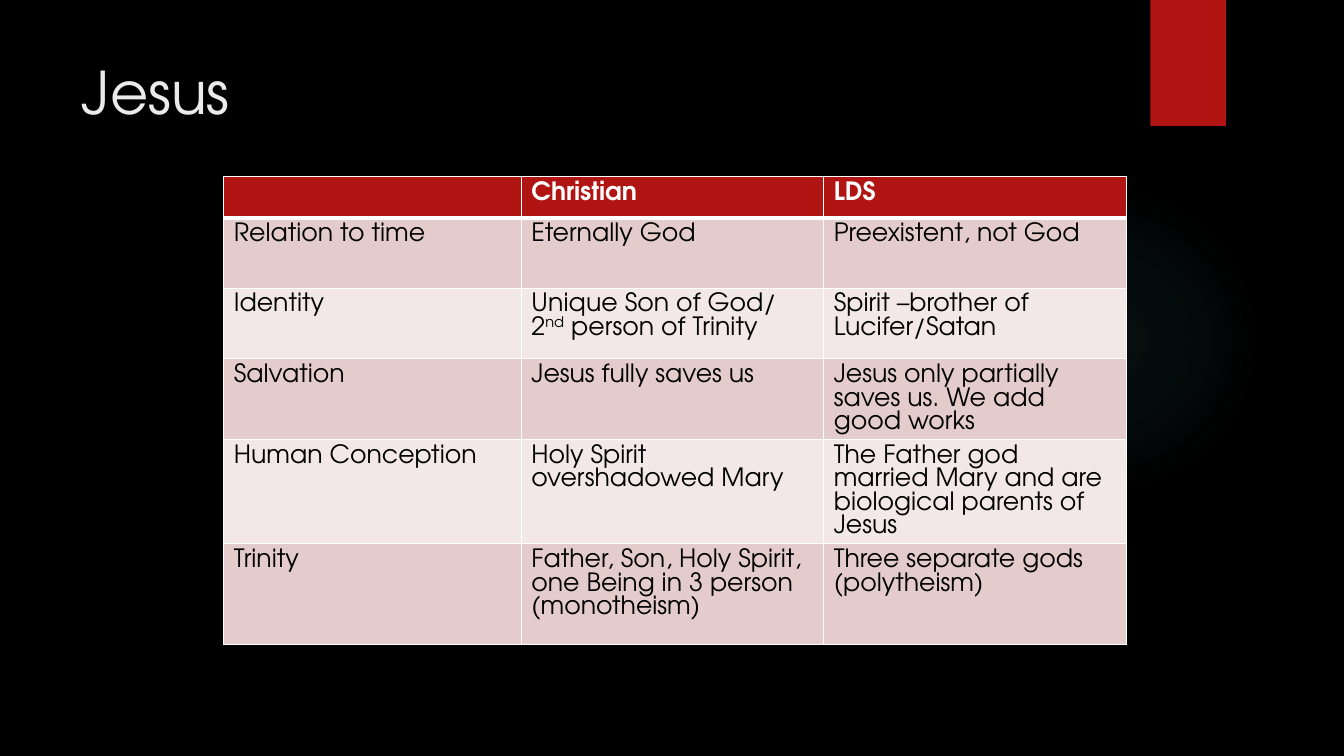
from lxml import etree
from pptx import Presentation
from pptx.dml.color import RGBColor
from pptx.enum.shapes import MSO_SHAPE
from pptx.enum.text import MSO_ANCHOR, PP_ALIGN
from pptx.oxml import parse_xml
from pptx.util import Inches, Pt

RECT, OVAL = MSO_SHAPE.RECTANGLE, MSO_SHAPE.OVAL
TOP, LEFT = MSO_ANCHOR.TOP, PP_ALIGN.LEFT
NS = "http://schemas.openxmlformats.org/drawingml/2006/main"

TITLE = "Jesus"
ROWS = [
    ("", "Christian", "LDS"),
    ("Relation to time", "Eternally God", "Preexistent, not God"),
    ("Identity", "Unique Son of God/ 2^nd^ person of Trinity",
     "Spirit –brother of Lucifer/Satan"),
    ("Salvation", "Jesus fully saves us",
     "Jesus only partially saves us. We add good works"),
    ("Human Conception", "Holy Spirit overshadowed Mary",
     "The Father god married Mary and are biological parents of Jesus"),
    ("Trinity",
     "Father, Son, Holy Spirit, one Being in 3 person\n(monotheism)",
     "Three separate gods (polytheism)"),
]
WIDTHS = (2.95, 3, 3)
HEIGHTS = (0.41, 0.7, 0.7, 0.7, 0.7, 1)
GLOW = ((0, 7), (36, 6), (69, 0))


class Theme:
    font = "TeX Gyre Adventor"
    back, ink, white = "000000", "000000", "FFFFFF"
    title, red, glow = "EBEBEB", "B01513", "50B9C1"
    bands = ("F2E8E7", "E4CCCC")
    big, body = 42, 18
    thin, thick = 1, 3


def paint(fill, color):
    fill.solid()
    fill.fore_color.rgb = RGBColor.from_string(color)


def write(frame, text, size=Theme.body, color=Theme.ink, bold=False):
    for i, line in enumerate(text.split("\n")):
        para = frame.add_paragraph() if i else frame.paragraphs[0]
        para.alignment = LEFT
        para.font.size = Pt(size)
        for j, part in enumerate(line.split("^")):
            if not part:
                continue
            run = para.add_run()
            run.text = part
            font = run.font
            font.name, font.size, font.bold = Theme.font, Pt(size), bold
            font.color.rgb = RGBColor.from_string(color)
            if j % 2:
                font._element.set("baseline", "30000")


def edge(cell, **sides):
    props = cell._tc.get_or_add_tcPr()
    for side, width in sides.items():
        line = etree.SubElement(props, f"{{{NS}}}ln{side}", w=str(Pt(width)))
        solid = etree.SubElement(line, f"{{{NS}}}solidFill")
        etree.SubElement(solid, f"{{{NS}}}srgbClr", val=Theme.white)


def shape(slide, kind, *box):
    item = slide.shapes.add_shape(kind, *map(Inches, box))
    item.shadow.inherit = False
    item.line.fill.background()
    return item


def add_glow(slide):
    item = shape(slide, OVAL, 9.41, 1.83, 3.08, 3.08)
    stops = "".join(
        f'<a:gs pos="{pos * 1000}"><a:srgbClr val="{Theme.glow}">'
        f'<a:alpha val="{alpha * 1000}"/></a:srgbClr></a:gs>'
        for pos, alpha in GLOW)
    grad = parse_xml(
        f'<a:gradFill xmlns:a="{NS}"><a:gsLst>{stops}</a:gsLst>'
        '<a:path path="circle"><a:fillToRect l="50000" t="50000" '
        'r="50000" b="50000"/></a:path></a:gradFill>')
    item._element.spPr.find(f"{{{NS}}}prstGeom").addnext(grad)


def add_title(slide):
    title = slide.shapes.title
    title.left, title.top = Inches(0.71), Inches(0.5)
    title.width, title.height = Inches(10.29), Inches(1.53)
    title.text_frame.vertical_anchor = TOP
    write(title.text_frame, TITLE, size=Theme.big, color=Theme.title)


def add_grid(slide):
    box = map(Inches, (2.22, 1.75, sum(WIDTHS), sum(HEIGHTS)))
    table = slide.shapes.add_table(len(ROWS), len(WIDTHS), *box).table
    for col, width in zip(table.columns, WIDTHS):
        col.width = Inches(width)
    for r, (row, height) in enumerate(zip(ROWS, HEIGHTS)):
        table.rows[r].height = Inches(height)
        head = r == 0
        for c, text in enumerate(row):
            cell = table.cell(r, c)
            edge(cell, L=Theme.thin, R=Theme.thin,
                 T=Theme.thick if r == 1 else Theme.thin,
                 B=Theme.thick if head else Theme.thin)
            paint(cell.fill, Theme.red if head else Theme.bands[r % 2])
            write(cell.text_frame, text, bold=head,
                  color=Theme.white if head else Theme.ink)


def main():
    deck = Presentation()
    deck.slide_width, deck.slide_height = Inches(13.33), Inches(7.5)
    slide = deck.slides.add_slide(deck.slide_layouts[5])
    paint(slide.background.fill, Theme.back)
    add_glow(slide)
    paint(shape(slide, RECT, 11.41, 0, 0.75, 1.25).fill, Theme.red)
    add_title(slide)
    add_grid(slide)
    deck.save("out.pptx")


if __name__ == "__main__":
    main()
